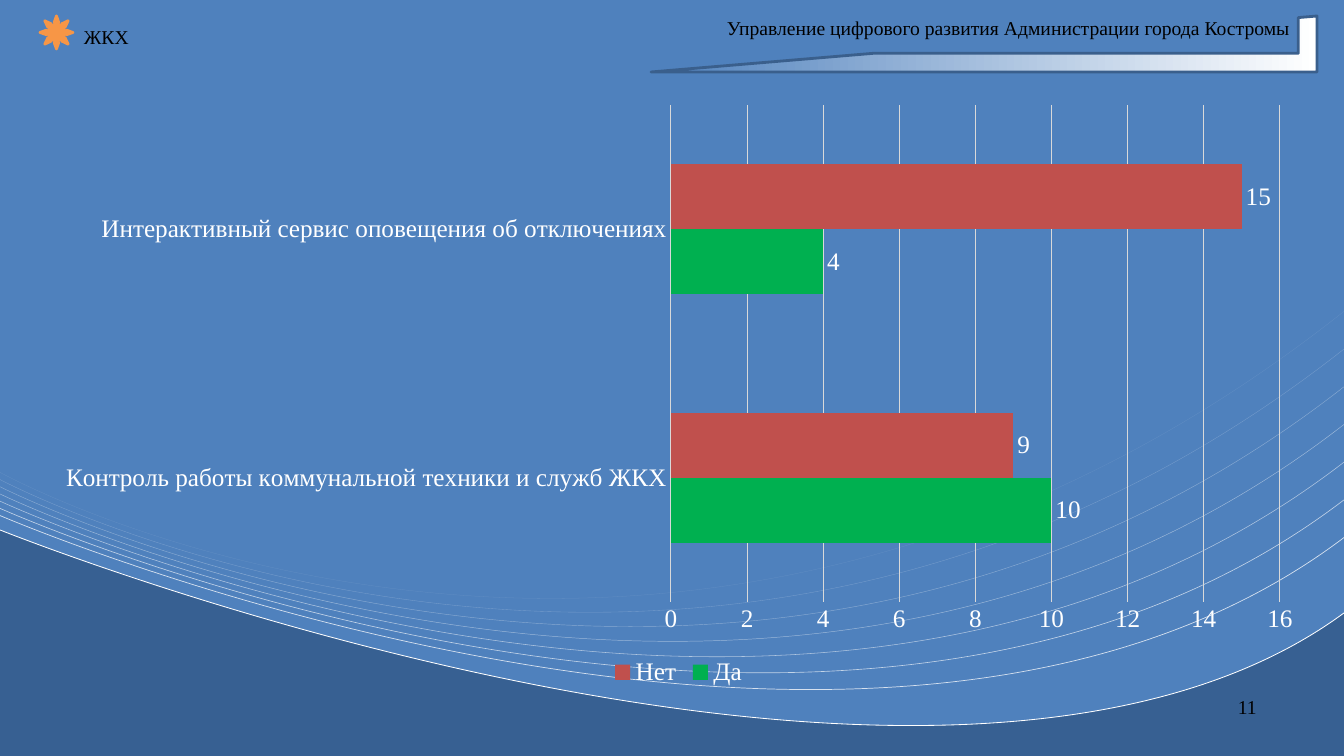
from dataclasses import dataclass

from lxml.etree import SubElement
from pptx import Presentation
from pptx.chart.data import CategoryChartData
from pptx.dml.color import RGBColor
from pptx.enum.chart import XL_CHART_TYPE as ChartType
from pptx.enum.chart import XL_LABEL_POSITION as LabelPosition
from pptx.enum.chart import XL_LEGEND_POSITION as LegendPosition
from pptx.enum.chart import XL_TICK_MARK as TickMark
from pptx.enum.shapes import MSO_SHAPE as Preset
from pptx.oxml import parse_xml
from pptx.oxml.ns import qn
from pptx.util import Emu, Pt

EMU_PER_PX = 914400 / 100.8
WIDTH, HEIGHT = 1344, 756
WAVE_HEIGHT = 754
FONT = "Times New Roman"
ARC_STEPS = (0, 2, 3, 4, 5, 6, 7, 8)
CHART_LEFT, CHART_TOP, CHART_WIDTH, CHART_HEIGHT = 40, 93, 1277, 598
PLOT_LEFT, PLOT_TOP, PLOT_WIDTH, PLOT_HEIGHT = 631, 12, 609, 497
CHART_NS = "http://schemas.openxmlformats.org/drawingml/2006/chart"

Point = tuple[float, float]


@dataclass(frozen=True)
class Arc:
    start_y: float
    pull_x: float
    pull_y: float
    end_y: float
    weight: float
    opacity: float


@dataclass(frozen=True)
class Caption:
    left: int
    top: int
    width: int
    text: str
    wrap: bool = True


@dataclass(frozen=True)
class Answer:
    name: str
    counts: tuple[int, ...]
    colour: str


CAPTIONS = [
    Caption(717, 11, 586, "Управление цифрового развития Администрации города Костромы", False),
    Caption(74, 20, 448, "ЖКХ"),
    Caption(1228, 690, 90, "11"),
]
SERVICES = [
    "Контроль работы коммунальной техники и служб ЖКХ",
    "Интерактивный сервис оповещения об отключениях",
]
ANSWERS = [Answer("Да", (10, 4), "00B050"), Answer("Нет", (9, 15), "C0504D")]
ARCS = [
    Arc(530 - 7.2 * i, 943 - 34 * i, 908 - 8 * i, 613 - 37.7 * i, 0.6 - 0.05 * i, 100 - 11.25 * i)
    for i in ARC_STEPS
]


def px(length: float) -> Emu:
    return Emu(round(length * EMU_PER_PX))


def rgb(value: str) -> RGBColor:
    return RGBColor.from_string(value)


def box(left: int, top: int, width: int, height: int) -> tuple[Emu, ...]:
    return px(left), px(top), px(width), px(height)


def style_font(font, size: int, colour: str) -> None:
    font.name = FONT
    font.size = Pt(size)
    font.color.rgb = rgb(colour)


def style_line(line, colour: str, weight: float) -> None:
    line.color.rgb = rgb(colour)
    line.width = Pt(weight)


def add_command(outline, command: str, *points: Point) -> None:
    parent = SubElement(outline, qn(f"a:{command}"))
    for x, y in points:
        SubElement(parent, qn("a:pt"), x=str(px(x)), y=str(px(y)))


def draw_wave(slide, arc: Arc, closed: bool):
    builder = slide.shapes.build_freeform(0, 0, scale=1.0)
    builder.add_line_segments([(px(WIDTH), px(WAVE_HEIGHT))], close=False)
    wave = builder.convert_to_shape()
    wave.shadow.inherit = False
    outline = next(wave._element.iter(qn("a:path")))
    for segment in list(outline):
        outline.remove(segment)
    start = (0, arc.start_y)
    add_command(outline, "moveTo", start)
    add_command(outline, "cubicBezTo", start, (arc.pull_x, arc.pull_y), (WIDTH, arc.end_y))
    if closed:
        add_command(outline, "lnTo", (WIDTH, 0))
        add_command(outline, "lnTo", (0, 0))
        add_command(outline, "close")
    return wave


def draw_sky(slide) -> None:
    sky = draw_wave(slide, ARCS[0], True)
    sky.fill.solid()
    sky.fill.fore_color.rgb = rgb("4F81BD")
    sky.line.fill.background()


def draw_arc(slide, arc: Arc) -> None:
    curve = draw_wave(slide, arc, False)
    curve.fill.background()
    style_line(curve.line, "FFFFFF", arc.weight)
    if arc.opacity < 100:
        colour = next(curve.line._ln.iter(qn("a:srgbClr")))
        SubElement(colour, qn("a:alpha"), val=str(round(arc.opacity * 1000)))


def draw_header_frame(slide) -> None:
    frame = slide.shapes.add_shape(Preset.HALF_FRAME, *box(651, 16, 666, 56))
    frame.shadow.inherit = False
    frame.rotation = 180
    frame.adjustments[0] = frame.adjustments[1] = 1 / 3
    frame.fill.gradient()
    frame.fill.gradient_angle = 180
    for stop, position, colour in zip(frame.fill.gradient_stops, (0, 1), ("4F81BD", "FFFFFF")):
        stop.position = position
        stop.color.rgb = rgb(colour)
    style_line(frame.line, "3A5F8C", 2)


def draw_sun(slide) -> None:
    sun = slide.shapes.add_shape(Preset.SUN, *box(40, 16, 33, 33))
    sun.shadow.inherit = False
    sun.fill.solid()
    sun.fill.fore_color.rgb = rgb("F79646")
    style_line(sun.line, "F79646", 2)


def draw_caption(slide, caption: Caption) -> None:
    frame = slide.shapes.add_textbox(*box(caption.left, caption.top, caption.width, 33)).text_frame
    frame.word_wrap = caption.wrap
    frame.text = caption.text
    style_font(frame.paragraphs[0].font, 14, "000000")


def place_plot(chart) -> None:
    shares = {
        "x": PLOT_LEFT / CHART_WIDTH,
        "y": PLOT_TOP / CHART_HEIGHT,
        "w": PLOT_WIDTH / CHART_WIDTH,
        "h": PLOT_HEIGHT / CHART_HEIGHT,
    }
    modes = "".join(f'<c:{side}Mode val="edge"/>' for side in "xy")
    values = "".join(f'<c:{side} val="{share:.4f}"/>' for side, share in shares.items())
    layout = parse_xml(
        f'<c:layout xmlns:c="{CHART_NS}"><c:manualLayout><c:layoutTarget val="inner"/>'
        f"{modes}{values}</c:manualLayout></c:layout>"
    )
    plot_area = next(chart._chartSpace.iter(qn("c:plotArea")))
    for automatic in plot_area.findall(qn("c:layout")):
        plot_area.remove(automatic)
    plot_area.insert(0, layout)


def draw_survey(slide) -> None:
    data = CategoryChartData()
    data.categories = SERVICES
    for answer in ANSWERS:
        data.add_series(answer.name, answer.counts)
    area = box(CHART_LEFT, CHART_TOP, CHART_WIDTH, CHART_HEIGHT)
    chart = slide.shapes.add_chart(ChartType.BAR_CLUSTERED, *area, data).chart
    style_font(chart.font, 18, "FFFFFF")
    chart.has_title = False
    chart.has_legend = True
    chart.legend.position = LegendPosition.BOTTOM
    chart.legend.include_in_layout = False
    style_font(chart.legend.font, 18, "FFFFFF")
    for axis in (chart.category_axis, chart.value_axis):
        axis.major_tick_mark = axis.minor_tick_mark = TickMark.NONE
        style_font(axis.tick_labels.font, 18, "FFFFFF")
    style_line(chart.category_axis.format.line, "D9D9D9", 0.75)
    chart.value_axis.format.line.fill.background()
    style_line(chart.value_axis.major_gridlines.format.line, "D9D9D9", 0.75)
    plot = chart.plots[0]
    plot.gap_width = 182
    plot.vary_by_categories = False
    for series, answer in zip(plot.series, ANSWERS):
        series.format.fill.solid()
        series.format.fill.fore_color.rgb = rgb(answer.colour)
        labels = series.data_labels
        labels.show_value = True
        labels.position = LabelPosition.OUTSIDE_END
        style_font(labels.font, 18, "FFFFFF")
    place_plot(chart)


def main() -> None:
    deck = Presentation()
    deck.slide_width, deck.slide_height = px(WIDTH), px(HEIGHT)
    slide = deck.slides.add_slide(deck.slide_layouts[6])
    slide.background.fill.solid()
    slide.background.fill.fore_color.rgb = rgb("376092")
    draw_sky(slide)
    for arc in ARCS:
        draw_arc(slide, arc)
    draw_header_frame(slide)
    draw_sun(slide)
    for caption in CAPTIONS:
        draw_caption(slide, caption)
    draw_survey(slide)
    deck.save("out.pptx")


if __name__ == "__main__":
    main()
